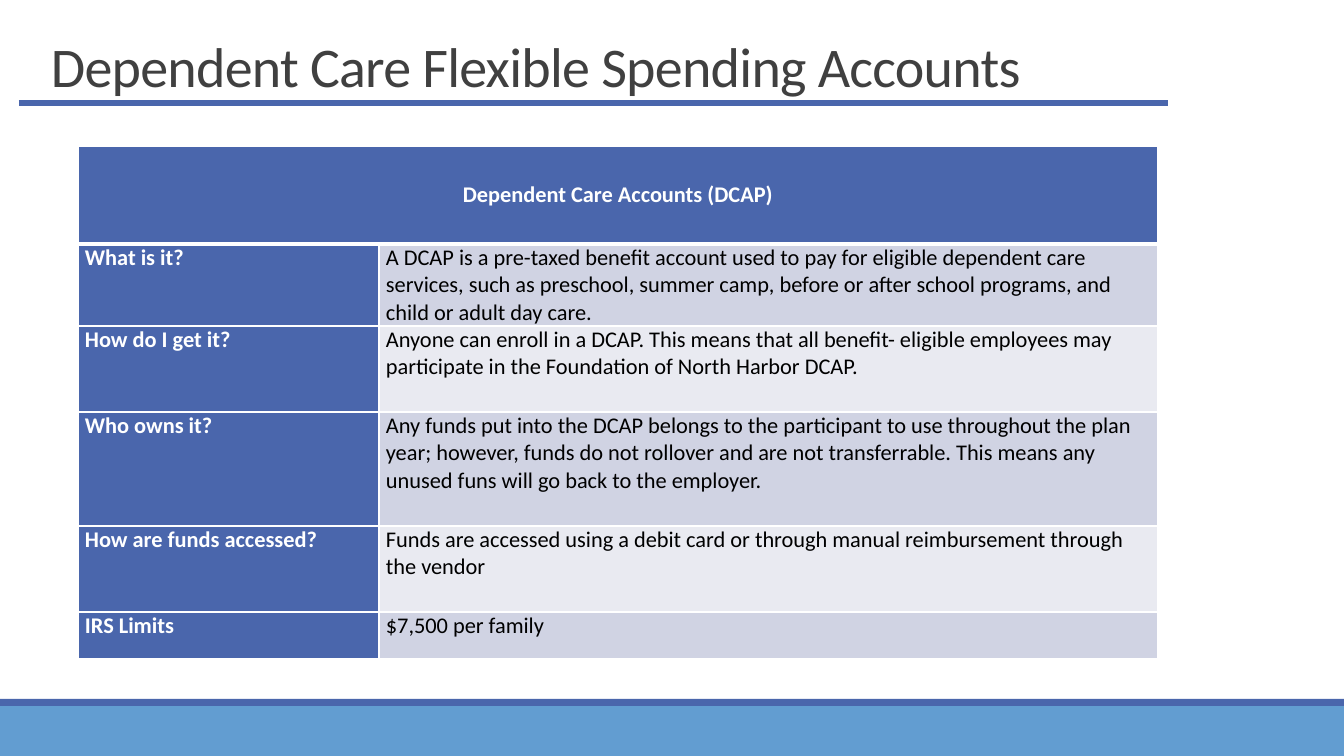
from lxml.etree import SubElement
from pptx import Presentation
from pptx.dml.color import RGBColor
from pptx.enum.shapes import MSO_CONNECTOR, MSO_SHAPE
from pptx.enum.text import MSO_ANCHOR, PP_ALIGN
from pptx.oxml.ns import qn
from pptx.util import Emu, Pt

PX = 914400 / 100.8
BLUE, SKY, WHITE, BLACK, GREY = "4A66AC", "629DD1", "FFFFFF", "000000", "404040"
BANDS = ["D0D3E3", "E9EAF1"]


def px(*lengths):
    return [Emu(round(length * PX)) for length in lengths]


def add_text(paragraph, text, size, color, bold=False):
    run = paragraph.add_run()
    run.text = text
    run.font.name = "Calibri"
    run.font.size = Pt(size)
    run.font.bold = bold
    run.font.color.rgb = RGBColor.from_string(color)
    return run


presentation = Presentation()
presentation.slide_width, presentation.slide_height = px(1344, 756)
slide = presentation.slides.add_slide(presentation.slide_layouts[6])

# Footer bands
for top, height, color in [(706, 50, SKY), (699, 7, BLUE)]:
    band = slide.shapes.add_shape(MSO_SHAPE.RECTANGLE, *px(0, top, 1344, height))
    band.shadow.inherit = False
    band.fill.solid()
    band.fill.fore_color.rgb = RGBColor.from_string(color)
    band.line.fill.background()

# Title and its rule
title = slide.shapes.add_textbox(*px(41, 39, 1303, 65))
title.text_frame.word_wrap = True
title.text_frame.vertical_anchor = MSO_ANCHOR.BOTTOM
title_paragraph = title.text_frame.paragraphs[0]
title_paragraph.line_spacing = 0.85
title_run = add_text(title_paragraph, "Dependent Care Flexible Spending Accounts", 40, GREY)
title_run.font._element.set("spc", "-50")

rule = slide.shapes.add_connector(MSO_CONNECTOR.STRAIGHT, *px(19, 103, 1168, 103))
rule.line.color.rgb = RGBColor.from_string(BLUE)
rule.line.width = Pt(4)
SubElement(rule._element.spPr, qn("a:effectLst"))

# Account table
rows = [
    ("Dependent Care Accounts (DCAP)", ""),
    ("What is it?",
     "A DCAP is a pre-taxed benefit account used to pay for eligible dependent care "
     "services, such as preschool, summer camp, before or after school programs, and "
     "child or adult day care."),
    ("How do I get it?",
     "Anyone can enroll in a DCAP. This means that all benefit- eligible employees may "
     "participate in the Foundation of North Harbor DCAP."),
    ("Who owns it?",
     "Any funds put into the DCAP belongs to the participant to use throughout the plan "
     "year; however, funds do not rollover and are not transferrable. This means any "
     "unused funs will go back to the employer."),
    ("How are funds accessed?",
     "Funds are accessed using a debit card or through manual reimbursement through "
     "the vendor"),
    ("IRS Limits", "$7,500 per family"),
]
row_heights = [98, 82, 86, 114, 86, 47]
column_widths = [301, 779]
table = slide.shapes.add_table(
    len(rows), 2, *px(78, 146, sum(column_widths), sum(row_heights))).table
for column, width in zip(table.columns, px(*column_widths)):
    column.width = width
for row, height in zip(table.rows, px(*row_heights)):
    row.height = height
table.cell(0, 0).merge(table.cell(0, 1))

for row_index, texts in enumerate(rows):
    is_header = row_index == 0
    for column_index, text in enumerate(texts):
        is_label = is_header or column_index == 0
        cell = table.cell(row_index, column_index)
        cell.margin_left, cell.margin_right, cell.margin_top, cell.margin_bottom = px(7, 7, 0, 0)
        cell.vertical_anchor = MSO_ANCHOR.MIDDLE if is_header else MSO_ANCHOR.TOP

        cell_properties = cell._tc.get_or_add_tcPr()
        for side in ("L", "R", "T", "B"):
            thick = (is_header and side == "B") or (row_index == 1 and side == "T")
            border = SubElement(cell_properties, qn(f"a:ln{side}"), w=str(Pt(3 if thick else 1)))
            border_fill = SubElement(border, qn("a:solidFill"))
            SubElement(border_fill, qn("a:srgbClr"), val=WHITE)
        cell.fill.solid()
        cell.fill.fore_color.rgb = RGBColor.from_string(
            BLUE if is_label else BANDS[(row_index - 1) % 2])

        if text:
            paragraph = cell.text_frame.paragraphs[0]
            paragraph.alignment = PP_ALIGN.CENTER if is_header else PP_ALIGN.LEFT
            paragraph.space_before = paragraph.space_after = Pt(3)
            add_text(paragraph, text, 16, WHITE if is_label else BLACK, is_label)

presentation.save("out.pptx")
